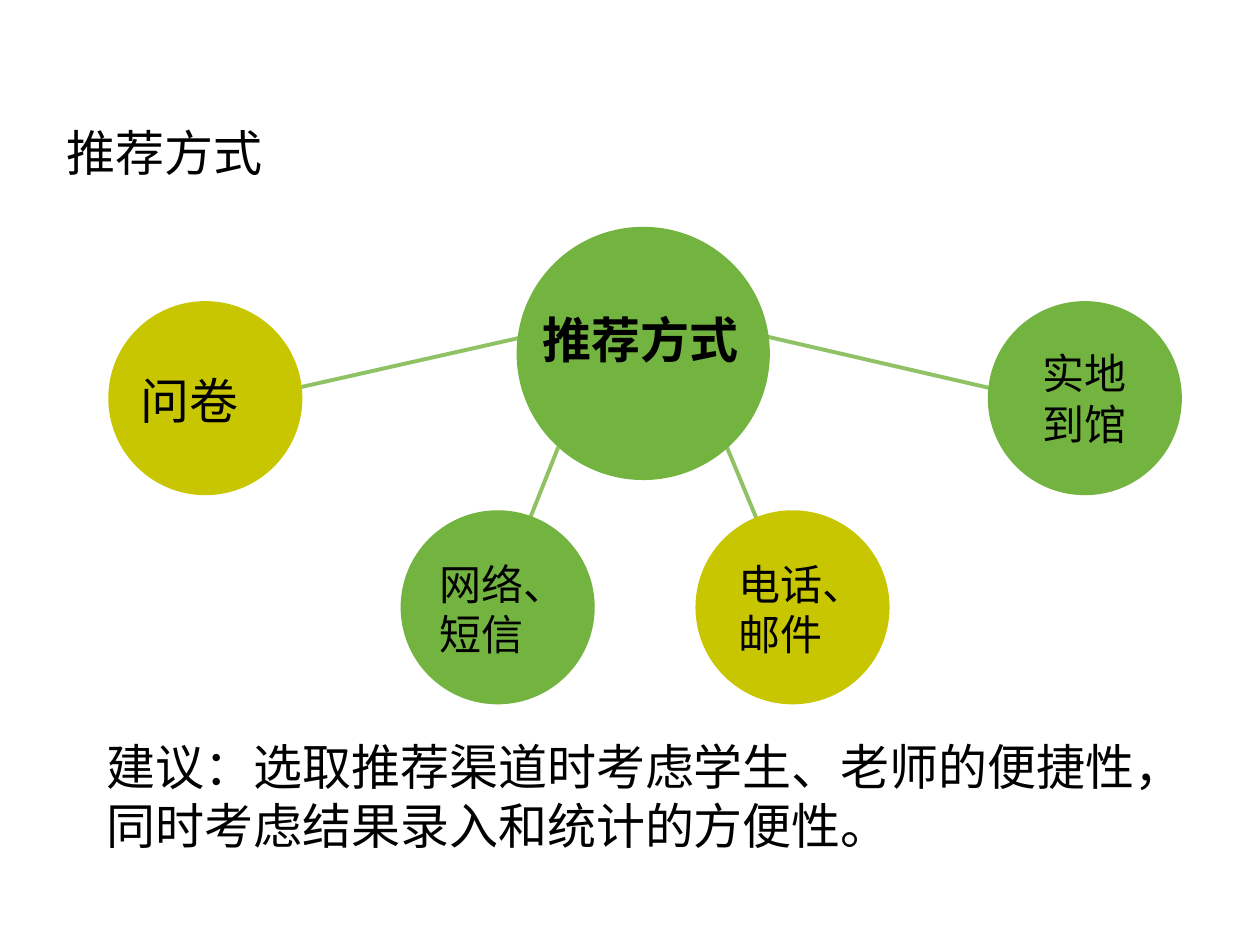
import pptx
import pptx.util
import pptx.dml.color
import pptx.enum.shapes
import pptx.enum.text
import pptx.oxml.ns
from lxml import etree

Inches = pptx.util.Inches
RGBColor = pptx.dml.color.RGBColor
GREEN = RGBColor(0x73, 0xB3, 0x3F)
YELLOW = RGBColor(0xC8, 0xC6, 0x00)
BLACK = RGBColor(0, 0, 0)
FONT = "Noto Sans CJK SC"

TITLE = (0.43, 0.92, 1.77, 0.57, ["推荐方式"], 28, False, False)
LABELS = [
    (3.39, 4.38, 1.21, 0.91, ["网络、", "短信"], 24, False, False),
    (4.21, 2.41, 1.77, 0.57, ["推荐方式"], 28, True, False),
    (1.02, 2.89, 0.99, 0.57, ["问卷"], 28, False, False),
    (5.76, 4.38, 1.21, 0.91, ["电话、", "邮件"], 24, False, False),
    (0.75, 5.8, 8.36, 1.04,
     ["建议：选取推荐渠道时考虑学生、老师的便捷性，同时考虑结果录入和统计的方便性。"],
     28, False, True),
]
SPOKES = [
    (5.77, 3.55, 6.01, 4.13),
    (4.43, 3.55, 4.2, 4.13),
    (4.13, 2.68, 2.31, 3.09),
    (6.08, 2.67, 7.9, 3.09),
]
HUB_RINGS = (0, 0.02, 0.06)
NODE_RINGS = (0, 0.03, 0.06)
CIRCLES = [
    (4.1, 1.8, 2.01, HUB_RINGS, GREEN, None),
    (3.18, 4.05, 1.54, NODE_RINGS, GREEN, None),
    (5.52, 4.05, 1.54, NODE_RINGS, YELLOW, None),
    (7.84, 2.39, 1.54, NODE_RINGS, GREEN, "实地到馆"),
    (0.86, 2.39, 1.54, NODE_RINGS, YELLOW, None),
]


def write_text(frame, lines, size, bold=False):
    for index, line in enumerate(lines):
        para = frame.paragraphs[0] if index == 0 else frame.add_paragraph()
        para.text = line
        font = para.font
        font.name = FONT
        font.size = pptx.util.Pt(size)
        font.bold = bold
        font.color.rgb = BLACK
        properties = para._p.pPr.find(pptx.oxml.ns.qn("a:defRPr"))
        latin = properties.find(pptx.oxml.ns.qn("a:latin"))
        east_asian = etree.Element(pptx.oxml.ns.qn("a:ea"), typeface=FONT)
        latin.addnext(east_asian)


def add_label(page, left, top, width, height, lines, size, bold, wrap):
    box = page.shapes.add_textbox(*map(Inches, (left, top, width, height)))
    box.text_frame.word_wrap = wrap
    box.text_frame.auto_size = pptx.enum.text.MSO_AUTO_SIZE.SHAPE_TO_FIT_TEXT
    write_text(box.text_frame, lines, size, bold)


def add_spoke(page, *ends):
    spoke = page.shapes.add_connector(
        pptx.enum.shapes.MSO_CONNECTOR.STRAIGHT, *map(Inches, ends))
    spoke.line.width = pptx.util.Pt(2.25)
    spoke.line.color.rgb = GREEN
    properties = spoke._element.spPr
    color = properties.find(".//" + pptx.oxml.ns.qn("a:srgbClr"))
    etree.SubElement(color, pptx.oxml.ns.qn("a:alpha"), val="80000")
    etree.SubElement(properties, pptx.oxml.ns.qn("a:effectLst"))


def add_circle(page, left, top, size, rings, color, text):
    group = page.shapes.add_group_shape()
    for inset in rings:
        diameter = Inches(size - 2 * inset)
        disc = group.shapes.add_shape(
            pptx.enum.shapes.MSO_SHAPE.OVAL,
            Inches(left + inset), Inches(top + inset), diameter, diameter)
        disc.shadow.inherit = False
        disc.fill.solid()
        disc.fill.fore_color.rgb = color
        disc.line.fill.background()
    if text:
        frame = disc.text_frame
        frame.word_wrap = True
        frame.vertical_anchor = pptx.enum.text.MSO_ANCHOR.MIDDLE
        write_text(frame, [text], 24)
        frame.paragraphs[0].alignment = pptx.enum.text.PP_ALIGN.CENTER


def main():
    deck = pptx.Presentation()
    deck.slide_width = Inches(10)
    deck.slide_height = Inches(7.5)
    page = deck.slides.add_slide(deck.slide_layouts[6])
    add_label(page, *TITLE)
    for spoke in SPOKES:
        add_spoke(page, *spoke)
    for circle in CIRCLES:
        add_circle(page, *circle)
    for label in LABELS:
        add_label(page, *label)
    deck.save("out.pptx")


if __name__ == "__main__":
    main()
